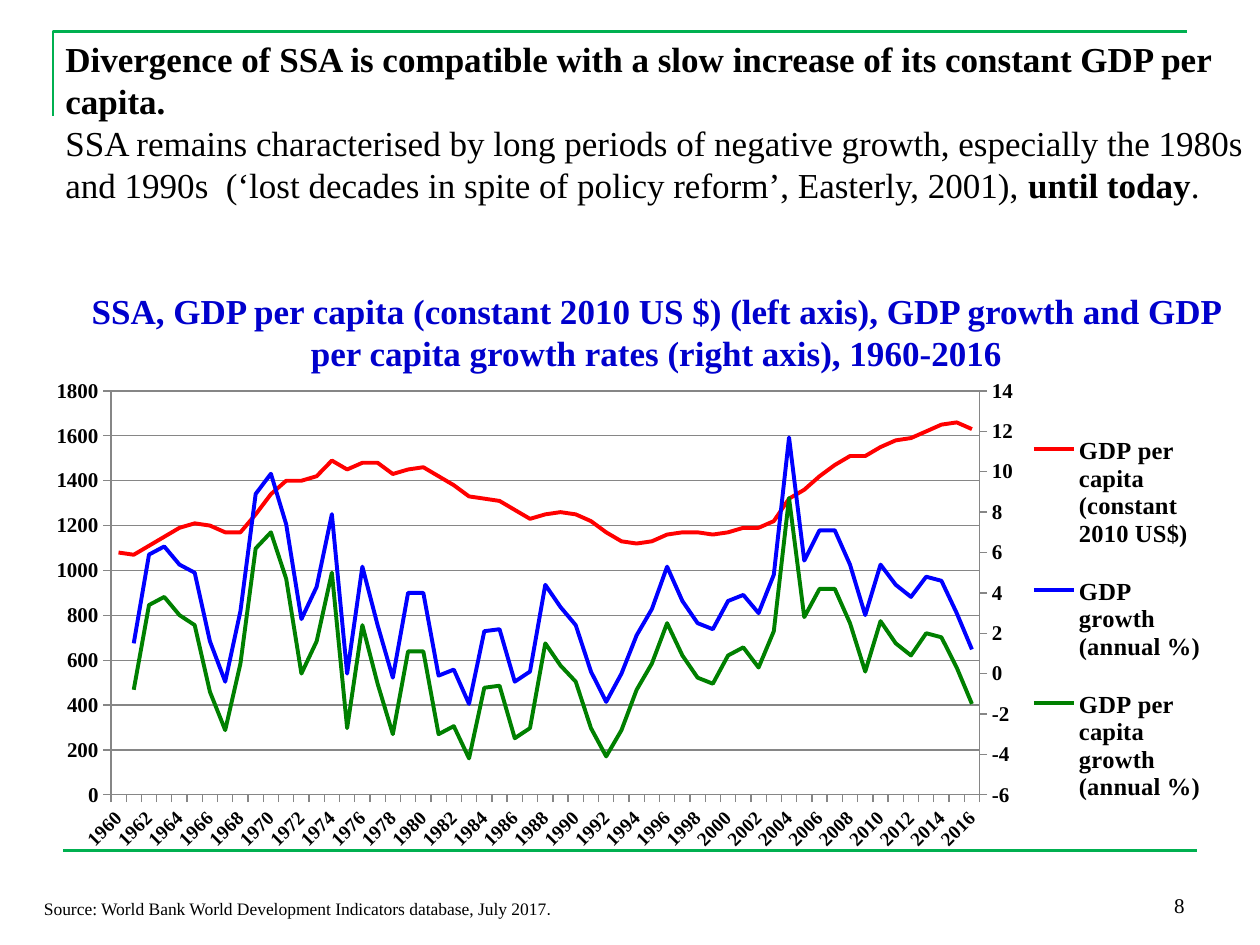
from copy import deepcopy

from lxml import etree
from pptx import Presentation
from pptx.chart.axis import ValueAxis
from pptx.chart.data import CategoryChartData
from pptx.dml.color import RGBColor
from pptx.enum.chart import XL_CHART_TYPE, XL_LEGEND_POSITION, XL_TICK_MARK
from pptx.enum.shapes import MSO_CONNECTOR
from pptx.enum.text import MSO_ANCHOR, PP_ALIGN
from pptx.oxml.ns import qn
from pptx.util import Inches, Pt

COLORS = {"rule": "00B050", "text": "000000", "title": "0000CC", "grid": "868686",
          "level": "FF0000", "growth": "0000FF", "capita_growth": "008000"}
SERIF = "Times New Roman"

YEARS = [str(year) for year in range(1960, 2017)]
GDP_PER_CAPITA = [
    1080, 1070, 1110, 1150, 1190, 1210, 1200, 1170, 1170, 1250, 1340, 1400, 1400, 1420, 1490,
    1450, 1480, 1480, 1430, 1450, 1460, 1420, 1380, 1330, 1320, 1310, 1270, 1230, 1250, 1260,
    1250, 1220, 1170, 1130, 1120, 1130, 1160, 1170, 1170, 1160, 1170, 1190, 1190, 1220, 1320,
    1360, 1420, 1470, 1510, 1510, 1550, 1580, 1590, 1620, 1650, 1660, 1630]
GDP_GROWTH = [
    None, 1.5, 5.9, 6.3, 5.4, 5, 1.6, -0.4, 3.1, 8.9, 9.9, 7.4, 2.7, 4.3, 7.9, 0, 5.3, 2.4,
    -0.2, 4, 4, -0.1, 0.2, -1.5, 2.1, 2.2, -0.4, 0.1, 4.4, 3.3, 2.4, 0.1, -1.4, 0, 1.9, 3.2,
    5.3, 3.6, 2.5, 2.2, 3.6, 3.9, 3, 4.9, 11.7, 5.6, 7.1, 7.1, 5.4, 2.9, 5.4, 4.4, 3.8, 4.8,
    4.6, 3, 1.2]
CAPITA_GROWTH = [
    None, -0.8, 3.4, 3.8, 2.9, 2.4, -0.9, -2.8, 0.5, 6.2, 7, 4.7, 0, 1.6, 5, -2.7, 2.4, -0.5,
    -3, 1.1, 1.1, -3, -2.6, -4.2, -0.7, -0.6, -3.2, -2.7, 1.5, 0.4, -0.4, -2.7, -4.1, -2.8,
    -0.8, 0.5, 2.5, 0.9, -0.2, -0.5, 0.9, 1.3, 0.3, 2.1, 8.7, 2.8, 4.2, 4.2, 2.5, 0.1, 2.6,
    1.5, 0.9, 2, 1.8, 0.3, -1.5]
SERIES = [("GDP per capita (constant 2010 US$)", GDP_PER_CAPITA, "level"),
          ("GDP growth (annual %)", GDP_GROWTH, "growth"),
          ("GDP per capita growth (annual %)", CAPITA_GROWTH, "capita_growth")]


def rgb(name):
    return RGBColor.from_string(COLORS[name])


def add_text_box(slide, left, top, width, height):
    frame = slide.shapes.add_textbox(left, top, width, height).text_frame
    frame.word_wrap = True
    return frame


def add_run(paragraph, text, size, bold=False, color="text", font=SERIF):
    run = paragraph.add_run()
    run.text = text
    run.font.name, run.font.size, run.font.bold = font, Pt(size), bold
    run.font.color.rgb = rgb(color)


def add_frame_rules(slide, left, top, width, height):
    """Corner rule at the top left and a straight rule under the content."""
    builder = slide.shapes.build_freeform(left, top + height)
    builder.add_line_segments([(left, top), (left + width, top)], close=False)
    corner = builder.convert_to_shape()
    corner.shadow.inherit = False
    corner.fill.background()

    rule_left, rule_top = left + Inches(0.08), top + Inches(6.5)
    bottom = slide.shapes.add_connector(
        MSO_CONNECTOR.STRAIGHT, rule_left, rule_top, rule_left + width, rule_top)
    etree.SubElement(bottom._element.spPr, qn("a:effectLst"))
    for rule in (corner, bottom):
        rule.line.color.rgb = rgb("rule")
        rule.line.width = Pt(1.5)
    bottom._element.spPr.append(bottom._element.spPr.find(qn("a:effectLst")))


def add_message(slide, left, top, width, height):
    frame = add_text_box(slide, left, top, width, height)
    headline = frame.paragraphs[0]
    detail, chart_title = frame.add_paragraph(), frame.add_paragraph()
    for paragraph in frame.paragraphs:
        paragraph.line_spacing = Pt(24)
    add_run(headline, "Divergence of SSA is compatible with a slow increase of its "
            "constant GDP per capita.", 20, bold=True)
    add_run(detail, "SSA remains characterised by long periods of negative growth, especially "
            "the 1980s and 1990s  (‘lost decades in spite of policy reform’, Easterly, 2001), ",
            20)
    add_run(detail, "until today", 20, bold=True)
    add_run(detail, ".", 20)
    chart_title.alignment = PP_ALIGN.CENTER
    chart_title.space_before = Pt(48)
    add_run(chart_title, "SSA, GDP per capita (constant 2010 US $) (left axis), GDP growth and "
            "GDP per capita growth rates (right axis), 1960-2016", 20, bold=True, color="title")


def make_layout(x, y, w, h, inner=False):
    layout = etree.Element(qn("c:layout"))
    manual = etree.SubElement(layout, qn("c:manualLayout"))
    settings = [("layoutTarget", "inner")] if inner else []
    settings += [("xMode", "edge"), ("yMode", "edge"), ("x", x), ("y", y), ("w", w), ("h", h)]
    for tag, value in settings:
        etree.SubElement(manual, qn(f"c:{tag}")).set("val", str(value))
    return layout


def set_scale(axis, low, high, step):
    axis.minimum_scale, axis.maximum_scale, axis.major_unit = low, high, step


def style_axis(axis, size):
    axis.major_tick_mark = XL_TICK_MARK.OUTSIDE
    axis.tick_labels.font.size = Pt(size)
    axis.format.line.color.rgb = rgb("grid")


def add_right_axis(chart):
    """Move every series but the first to a second line plot with its own axes."""
    left_plot = chart.plots[0]._element
    category, value = chart.category_axis._element, chart.value_axis._element
    right_plot = deepcopy(left_plot)
    right_plot.remove(right_plot.findall(qn("c:ser"))[0])
    for series in left_plot.findall(qn("c:ser"))[1:]:
        left_plot.remove(series)
    left_plot.addnext(right_plot)

    right_category, right_value = deepcopy(category), deepcopy(value)
    value.addnext(right_value)
    right_value.addnext(right_category)
    ids = {"category": "50010", "value": "50020"}
    for element, own, other in ((right_category, "category", "value"),
                                (right_value, "value", "category")):
        element.find(qn("c:axId")).set("val", ids[own])
        element.find(qn("c:crossAx")).set("val", ids[other])
    for reference, axis_id in zip(right_plot.findall(qn("c:axId")), ids.values()):
        reference.set("val", axis_id)
    right_category.find(qn("c:delete")).set("val", "1")
    right_value.find(qn("c:axPos")).set("val", "r")
    right_value.find(qn("c:crosses")).set("val", "max")

    right_axis = ValueAxis(right_value)
    right_axis.has_major_gridlines = False
    set_scale(right_axis, -6, 14, 2)


def add_growth_chart(slide, left, top, width, height):
    data = CategoryChartData()
    data.categories = YEARS
    for name, values, _ in SERIES:
        data.add_series(name, values)
    chart = slide.shapes.add_chart(XL_CHART_TYPE.LINE, left, top, width, height, data).chart
    chart.has_title = False
    chart.font.name, chart.font.size, chart.font.bold = SERIF, Pt(12), True
    chart.font.color.rgb = rgb("text")
    chart.plots[0].vary_by_categories = False
    for series, (_, _, color) in zip(chart.plots[0].series, SERIES):
        series.smooth = False
        series.format.line.color.rgb = rgb(color)
        series.format.line.width = Pt(2.25)

    years, dollars = chart.category_axis, chart.value_axis
    style_axis(years, 11)
    style_axis(dollars, 12)
    set_scale(dollars, 0, 1800, 200)
    dollars.major_gridlines.format.line.color.rgb = rgb("grid")
    years._element.find(qn("c:txPr")).find(qn("a:bodyPr")).set("rot", "-2700000")
    no_multi_level = years._element.find(qn("c:noMultiLvlLbl"))
    for tag, step in (("tickLblSkip", "2"), ("tickMarkSkip", "1")):
        skip = etree.Element(qn(f"c:{tag}"))
        skip.set("val", step)
        no_multi_level.addprevious(skip)

    chart.has_legend = True
    chart.legend.position = XL_LEGEND_POSITION.RIGHT
    chart.legend.include_in_layout = False
    chart.legend.font.size = Pt(14)
    legend = chart.legend._element
    plot_area = chart.plots[0]._element.getparent()
    for parent in (legend, plot_area):
        for layout in parent.findall(qn("c:layout")):
            parent.remove(layout)
    legend.find(qn("c:legendPos")).addnext(make_layout(0.84, 0.06, 0.15, 0.88))
    plot_area.insert(0, make_layout(0.059, 0.027, 0.739, 0.837, inner=True))
    add_right_axis(chart)


def add_footer(slide, left, top, width, height):
    source = add_text_box(slide, left, top + Inches(0.25), Inches(5.67), Inches(0.27))
    add_run(source.paragraphs[0],
            "Source: World Bank World Development Indicators database, July 2017", 10)
    add_run(source.paragraphs[0], ".", 10, font="Arial")

    number_width = Inches(2.33)
    number = add_text_box(slide, left + width - number_width, top, number_width, height)
    number.vertical_anchor = MSO_ANCHOR.BOTTOM
    number.paragraphs[0].alignment = PP_ALIGN.RIGHT
    add_run(number.paragraphs[0], "8", 12)


def main():
    deck = Presentation()
    deck.slide_width, deck.slide_height = Inches(10), Inches(7.5)
    slide = deck.slides.add_slide(deck.slide_layouts[6])
    add_frame_rules(slide, Inches(0.42), Inches(0.25), Inches(9), Inches(0.67))
    add_growth_chart(slide, Inches(0.33), Inches(3), Inches(9.33), Inches(3.83))
    add_message(slide, Inches(0.42), Inches(0.25), Inches(9.58), Inches(2.79))
    add_footer(slide, Inches(0.25), Inches(6.83), Inches(9.25), Inches(0.5))
    deck.save("out.pptx")


if __name__ == "__main__":
    main()
